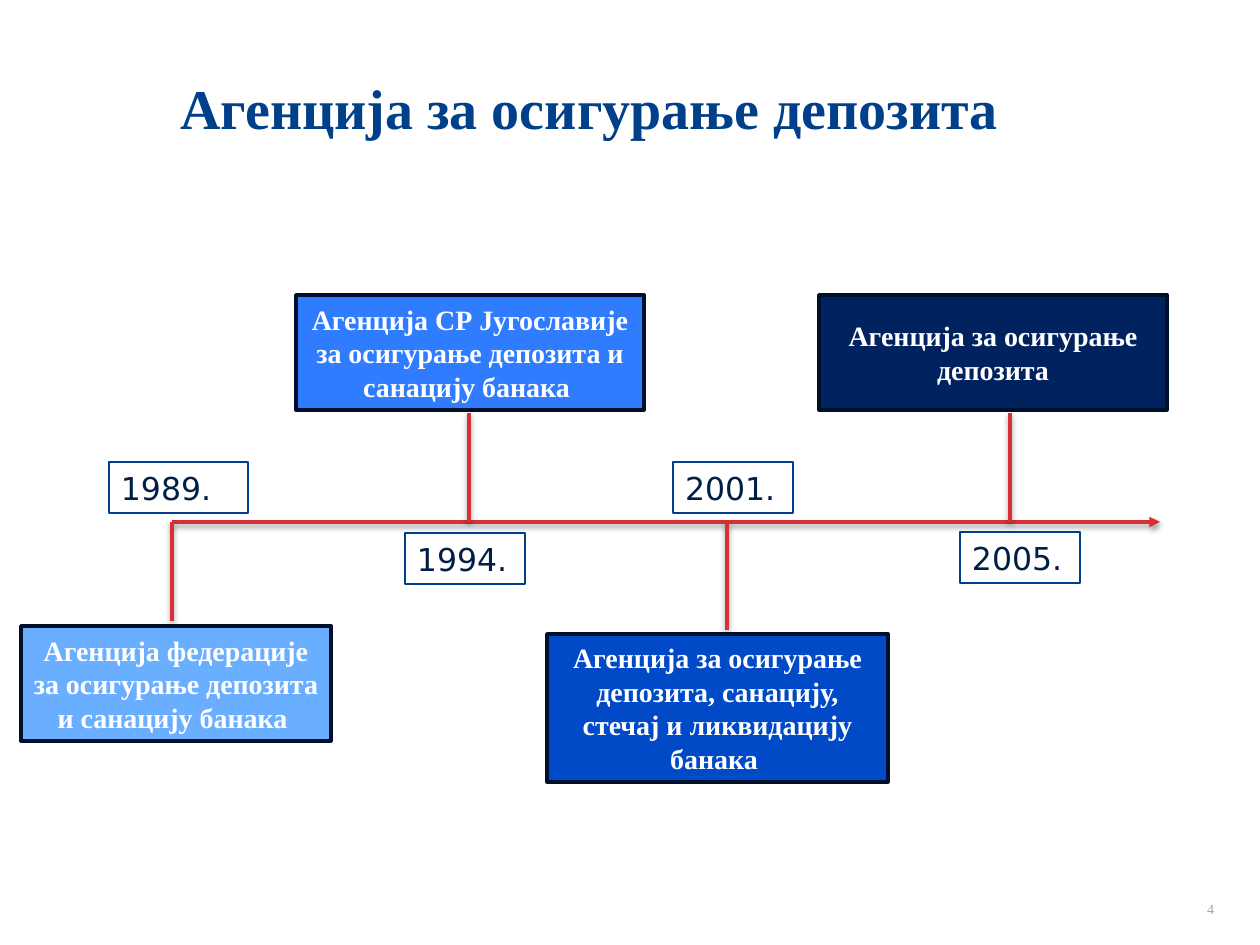
from lxml import etree
from pptx import Presentation
from pptx.dml.color import RGBColor
from pptx.enum.shapes import MSO_CONNECTOR, MSO_SHAPE
from pptx.enum.text import MSO_ANCHOR, PP_ALIGN
from pptx.oxml import parse_xml
from pptx.oxml.ns import nsdecls
from pptx.util import Pt

PX = 914400 // 126
LEFT, CENTER, RIGHT = PP_ALIGN.LEFT, PP_ALIGN.CENTER, PP_ALIGN.RIGHT
MIDDLE, BOTTOM = MSO_ANCHOR.MIDDLE, MSO_ANCHOR.BOTTOM
RECTANGLE, STRAIGHT = MSO_SHAPE.RECTANGLE, MSO_CONNECTOR.STRAIGHT

SERIF, SANS = "Times New Roman", "DejaVu Sans"
BLUE, RED = "003F8A", "D83036"
AXIS_Y = 522
SHADOW = (
    f'<a:effectLst {nsdecls("a")}><a:outerShdw blurRad="39370" dist="20320" dir="5400000" '
    'rotWithShape="0"><a:srgbClr val="000000"><a:alpha val="38000"/></a:srgbClr>'
    '</a:outerShdw></a:effectLst>'
)


def write(shape, text, size, color, font=SERIF, bold=False, align=LEFT, anchor=MIDDLE, inset=12):
    frame = shape.text_frame
    frame.word_wrap = True
    frame.vertical_anchor = anchor
    frame.margin_left = inset * PX
    frame.margin_right = 12 * PX
    frame.margin_top = frame.margin_bottom = 6 * PX
    paragraph = frame.paragraphs[0]
    paragraph.alignment = align
    run = paragraph.add_run()
    run.text = text
    run.font.name, run.font.size, run.font.bold = font, Pt(size), bold
    run.font.color.rgb = RGBColor.from_string(color)


def add_line(x1, y1, x2, y2):
    line = slide.shapes.add_connector(STRAIGHT, x1 * PX, y1 * PX, x2 * PX, y2 * PX)
    line.line.color.rgb = RGBColor.from_string(RED)
    line.line.width = Pt(2)
    line._element.spPr.append(parse_xml(SHADOW))
    return line


presentation = Presentation()
presentation.slide_width, presentation.slide_height = 1260 * PX, 945 * PX
slide = presentation.slides.add_slide(presentation.slide_layouts[5])

# Title
title = slide.shapes.title
title.left, title.top, title.width, title.height = 92 * PX, 63 * PX, 1109 * PX, 89 * PX
write(title, "Агенција за осигурање депозита", 32, BLUE, bold=True, inset=88)

# Slide number
number = slide.shapes.add_textbox(932 * PX, 873 * PX, 294 * PX, 50 * PX)
write(number, "4", 8, "A6A6A6", align=RIGHT, anchor=BOTTOM)

# Time axis
axis = add_line(172, AXIS_Y, 1160, AXIS_Y)
etree.SubElement(axis.line._get_or_add_ln(), f"{{{axis._element.nsmap['a']}}}tailEnd", type="triangle")

# Stems from the axis to the agencies
for x, end in [(172, 621), (469, 413), (727, 630), (1010, 413)]:
    add_line(x, AXIS_Y, x, end)

# Agencies
agencies = [
    ("Агенција федерације за осигурање депозита и санацију банака ", 21, 626, 310, 115, "6AAEFF"),
    ("Агенција СР Југославије за осигурање депозита и санацију банака ", 296, 295, 348, 115, "307CFF"),
    ("Агенција за осигурање депозита, санацију, стечај и ликвидацију банака ",
     547, 634, 341, 148, "0049C7"),
    ("Агенција за осигурање депозита", 819, 295, 348, 115, "00235F"),
]
for text, x, y, width, height, fill in agencies:
    box = slide.shapes.add_shape(RECTANGLE, x * PX, y * PX, width * PX, height * PX)
    box.shadow.inherit = False
    box.fill.solid()
    box.fill.fore_color.rgb = RGBColor.from_string(fill)
    box.line.color.rgb = RGBColor.from_string("000F2A")
    box.line.width = Pt(2)
    write(box, text, 16, "FFFFFF", bold=True, align=CENTER)

# Years
for year, x, y, width in [("1989.", 109, 462, 139), ("1994.", 405, 533, 120),
                          ("2001.", 673, 462, 120), ("2005.", 960, 532, 120)]:
    label = slide.shapes.add_shape(RECTANGLE, x * PX, y * PX, width * PX, 51 * PX)
    label.shadow.inherit = False
    label.fill.background()
    label.line.color.rgb = RGBColor.from_string(BLUE)
    label.line.width = Pt(0.75)
    write(label, year, 18, "001F45", font=SANS)

presentation.save("out.pptx")
